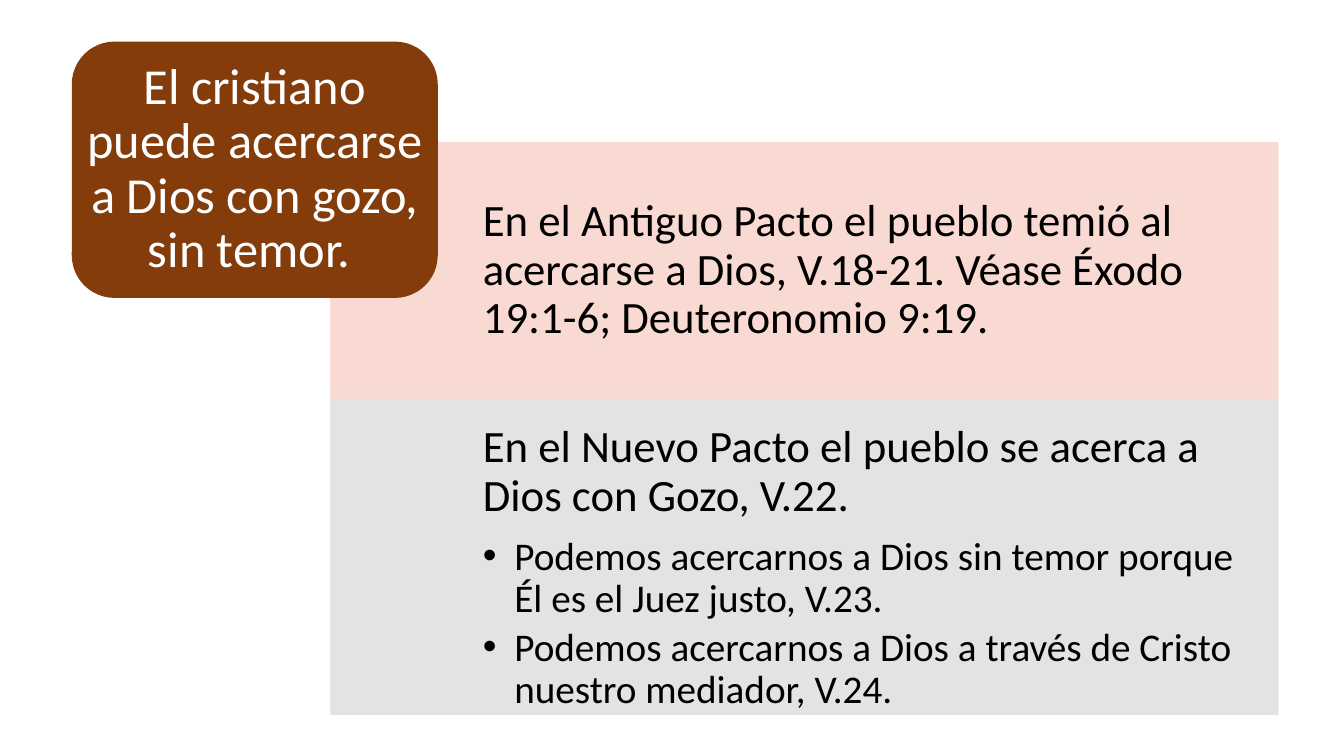
from dataclasses import dataclass

from lxml import etree
from pptx import Presentation
from pptx import util as u
from pptx.dml.color import RGBColor
from pptx.enum import shapes, text
from pptx.oxml import ns

BROWN = RGBColor(0x84, 0x3C, 0x0B)
PINK = RGBColor(0xF8, 0xD7, 0xCE)
GRAY = RGBColor(0xE1, 0xE1, 0xE1)
BLACK = RGBColor(0, 0, 0)
WHITE = RGBColor(255, 255, 255)

PANEL_LEFT, PANEL_WIDTH = 236.2, 676.8
TEXT_INDENT = 108.7
PANEL_MARGIN = 18
BADGE_PADDING = 9.15
BULLET_INDENT = 22.5


@dataclass
class Line:
    words: str
    size: float = 32
    space_after: float = 11.2
    bullet: bool = False


@dataclass
class Panel:
    top: float
    height: float
    color: RGBColor
    anchor: text.MSO_ANCHOR
    lines: list[Line]


PANELS = [
    Panel(101.8, 183.1, PINK, text.MSO_ANCHOR.MIDDLE, [
        Line("En el Antiguo Pacto el pueblo temió al acercarse a Dios, V.18-21. "
             "Véase Éxodo 19:1-6; Deuteronomio 9:19."),
    ]),
    Panel(284.9, 225.5, GRAY, text.MSO_ANCHOR.TOP, [
        Line("En el Nuevo Pacto el pueblo se acerca a Dios con Gozo, V.22."),
        Line("Podemos acercarnos a Dios sin temor porque Él es el Juez justo, V.23.", 28, 4.2, True),
        Line("Podemos acercarnos a Dios a través de Cristo nuestro mediador, V.24.", 28, 4.2, True),
    ]),
]
BADGE_LINE = Line("El cristiano puede acercarse a Dios con gozo, sin temor. ", 36)


def set_format(target, values: dict) -> None:
    for name, value in values.items():
        setattr(target, name, value)


def make_translucent(fill_parent) -> None:
    """Give the solid fill directly under an element 90 % opacity."""
    color = fill_parent.find(ns.qn("a:solidFill"))[0]
    etree.SubElement(color, ns.qn("a:alpha"), val="90000")


def add_block(slide, kind, left: float, top: float, width: float, height: float, color: RGBColor):
    block = slide.shapes.add_shape(kind, u.Pt(left), u.Pt(top), u.Pt(width), u.Pt(height))
    block.shadow.inherit = False
    block.fill.solid()
    block.fill.fore_color.rgb = color
    return block


def add_text(slide, left: float, top: float, width: float, height: float,
             lines: list[Line], color: RGBColor, frame_format: dict, align) -> None:
    box = slide.shapes.add_textbox(u.Pt(left), u.Pt(top), u.Pt(width), u.Pt(height))
    frame = box.text_frame
    set_format(frame, {"word_wrap": True, "margin_left": 0} | frame_format)
    for index, line in enumerate(lines):
        para = frame.paragraphs[0] if index == 0 else frame.add_paragraph()
        set_format(para, {"alignment": align, "line_spacing": 0.9,
                          "space_after": u.Pt(line.space_after)})
        if line.bullet:
            para.level = 1
            properties = para._p.get_or_add_pPr()
            properties.set("marL", str(u.Pt(BULLET_INDENT)))
            properties.set("indent", str(-u.Pt(BULLET_INDENT)))
            etree.SubElement(properties, ns.qn("a:buFont"), typeface="Arial")
            etree.SubElement(properties, ns.qn("a:buChar"), char="•")
        span = para.add_run()
        span.text = line.words
        set_format(span.font, {"name": "Calibri", "size": u.Pt(line.size)})
        span.font.color.rgb = color


def add_panel(slide, panel: Panel) -> None:
    block = add_block(slide, shapes.MSO_SHAPE.RECTANGLE, PANEL_LEFT, panel.top,
                      PANEL_WIDTH, panel.height, panel.color)
    block.line.color.rgb = panel.color
    block.line.width = u.Pt(0.5)
    properties = block._element.spPr
    make_translucent(properties)
    make_translucent(properties.find(ns.qn("a:ln")))
    margins = dict.fromkeys(("margin_top", "margin_right", "margin_bottom"), u.Pt(PANEL_MARGIN))
    add_text(slide, PANEL_LEFT + TEXT_INDENT, panel.top, PANEL_WIDTH - TEXT_INDENT, panel.height,
             panel.lines, BLACK, margins | {"vertical_anchor": panel.anchor}, text.PP_ALIGN.LEFT)


def add_badge(slide, left: float, top: float, width: float, height: float) -> None:
    block = add_block(slide, shapes.MSO_SHAPE.ROUNDED_RECTANGLE, left, top, width, height, BROWN)
    block.line.fill.background()
    margins = dict.fromkeys(("margin_top", "margin_right", "margin_bottom"), 0)
    add_text(slide, left + BADGE_PADDING, top + BADGE_PADDING,
             width - 2 * BADGE_PADDING, height - 2 * BADGE_PADDING, [BADGE_LINE], WHITE,
             margins | {"vertical_anchor": text.MSO_ANCHOR.MIDDLE}, text.PP_ALIGN.CENTER)


def main() -> None:
    deck = Presentation()
    set_format(deck, {"slide_width": u.Pt(960), "slide_height": u.Pt(540)})
    page = deck.slides.add_slide(deck.slide_layouts[6])
    for panel in PANELS:
        add_panel(page, panel)
    add_badge(page, 51.3, 29.7, 261.4, 183.1)
    deck.save("out.pptx")


if __name__ == "__main__":
    main()
